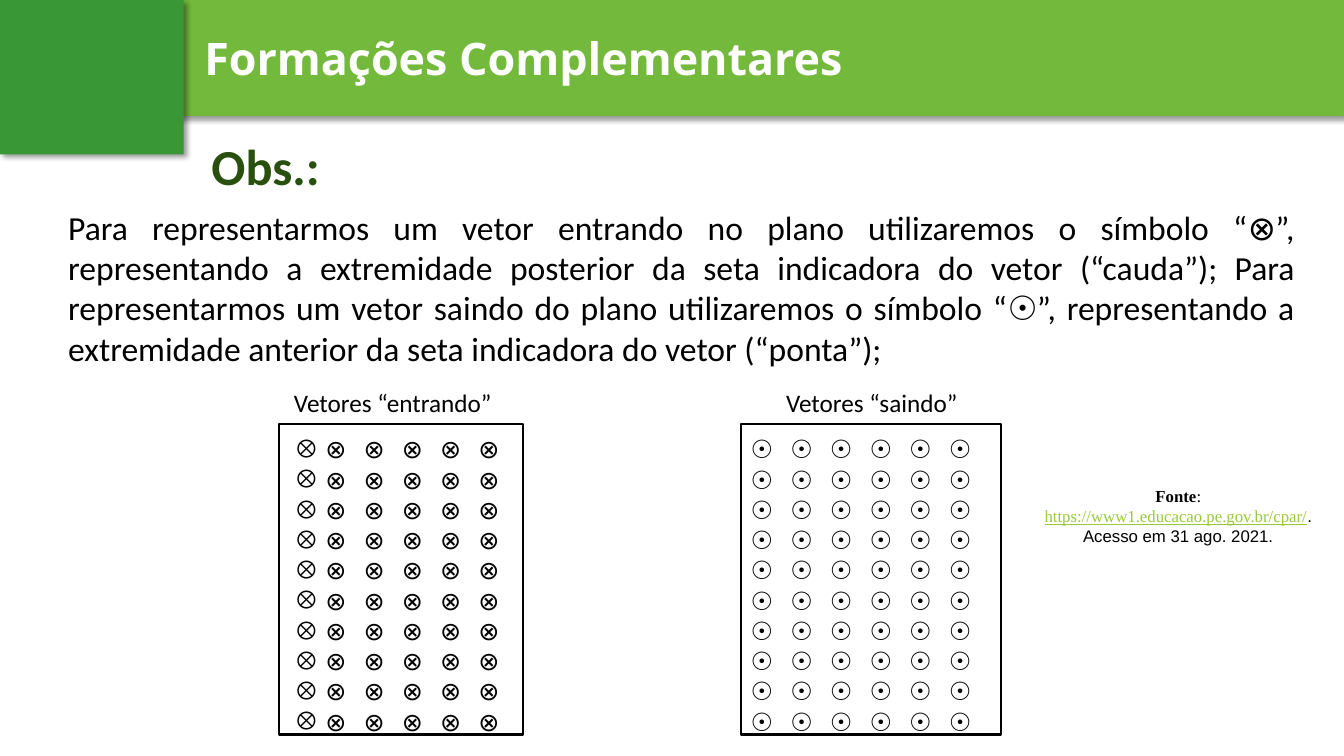
from dataclasses import dataclass

from lxml import etree
from pptx import Presentation
from pptx.dml.color import RGBColor
from pptx.enum.shapes import MSO_SHAPE
from pptx.enum.text import PP_ALIGN
from pptx.oxml import parse_xml
from pptx.oxml.ns import nsdecls, qn
from pptx.util import Cm, Pt

RECTANGLE = MSO_SHAPE.RECTANGLE
LEFT, CENTER, JUSTIFY = PP_ALIGN.LEFT, PP_ALIGN.CENTER, PP_ALIGN.JUSTIFY


@dataclass(frozen=True)
class Theme:
    bar: str = "72B93C"
    square: str = "399736"
    heading: str = "2A5010"
    link: str = "99CA3C"
    black: str = "000000"
    white: str = "FFFFFF"
    body_font: str = "Calibri"
    header_font: str = "Open Sans"
    source_font: str = "Times New Roman"
    plain_font: str = "Arial"
    header_size: int = 32
    heading_size: int = 36
    body_size: int = 24
    label_size: int = 18
    source_size: int = 12
    symbol_spacing: float = 4.07


THEME = Theme()
GRID_ROWS = 10


def format_run(run, size, color=THEME.black, font=THEME.body_font, bold=False, underline=False):
    run.font.size = Pt(size)
    run.font.name = font
    run.font.bold = bold
    run.font.underline = underline
    run.font.color.rgb = RGBColor.from_string(color)


def shadow_effect():
    return parse_xml(
        f'<a:effectLst {nsdecls("a")}><a:outerShdw blurRad="50800" dist="38100" '
        f'dir="2700000" algn="tl" rotWithShape="0"><a:srgbClr val="{THEME.black}">'
        '<a:alpha val="40000"/></a:srgbClr></a:outerShdw></a:effectLst>')


def add_text(slide, box, text, size, align=LEFT, inset=0.13, **style):
    """Place text in a box given as left, top, width, height in cm."""
    shape = slide.shapes.add_textbox(*map(Cm, box))
    frame = shape.text_frame
    frame.word_wrap = True
    frame.margin_top = frame.margin_bottom = Cm(inset)
    frame.text = text
    for paragraph in frame.paragraphs:
        paragraph.alignment = align
        for run in paragraph.runs:
            format_run(run, size, **style)
    return frame


def add_block(slide, box, color):
    shape = slide.shapes.add_shape(RECTANGLE, *map(Cm, box))
    shape.fill.solid()
    shape.fill.fore_color.rgb = RGBColor.from_string(color)
    shape.line.fill.background()
    shape._element.spPr.append(shadow_effect())


def add_bullet(paragraph, symbol):
    properties = paragraph._p.get_or_add_pPr()
    indent = Cm(0.79)
    properties.set("marL", str(indent))
    properties.set("indent", str(-indent))
    color = etree.SubElement(properties, qn("a:buClr"))
    etree.SubElement(color, qn("a:srgbClr"), val=THEME.black)
    etree.SubElement(properties, qn("a:buFont"), typeface=THEME.plain_font)
    etree.SubElement(properties, qn("a:buChar"), char=symbol)


def add_header(slide, box, title):
    left, top, width, height = box
    add_block(slide, (left + 3.58, top, width - 3.58, height), THEME.bar)
    frame = add_text(slide, (left + 4.9, top + 0.64, 27.48, 1.63), title, THEME.header_size,
                     color=THEME.white, font=THEME.header_font, bold=True)
    properties = frame.paragraphs[0].runs[0].font._element
    properties.find(qn("a:solidFill")).addnext(shadow_effect())
    add_block(slide, (left, top, 4.63, 3.89), THEME.square)


def add_explanation(slide, box):
    left, top, width, height = box
    add_text(slide, (left + 3.61, top, 27, 1.8), "Obs.:", THEME.heading_size,
             color=THEME.heading, bold=True)
    add_text(
        slide, (left, top + 1.8, width, height - 1.8),
        "Para representarmos um vetor entrando no plano utilizaremos o símbolo “⊗”, "
        "representando a extremidade posterior da seta indicadora do vetor (“cauda”); "
        "Para representarmos um vetor saindo do plano utilizaremos o símbolo “☉”, "
        "representando a extremidade anterior da seta indicadora do vetor (“ponta”);",
        THEME.body_size, align=JUSTIFY)


def add_vector_panel(slide, box, caption, symbol, columns, text_offset, caption_offset,
                     align=LEFT, bulleted=False):
    left, top, width, height = box
    # Symbol grid, one paragraph per row
    row = " ".join([symbol] * columns)
    grid_box = (left + text_offset, top + 0.11, width - text_offset, height + 0.13)
    frame = add_text(slide, grid_box, "\n".join([row] * GRID_ROWS), THEME.label_size)
    for paragraph in frame.paragraphs:
        paragraph.runs[0].font._element.set("spc", str(round(THEME.symbol_spacing * 100)))
        if bulleted:
            add_bullet(paragraph, symbol)
    # Frame
    border = slide.shapes.add_shape(RECTANGLE, *map(Cm, box))
    border.shadow.inherit = False
    border.fill.background()
    border.line.color.rgb = RGBColor.from_string(THEME.black)
    border.line.width = Pt(1.5)
    # Caption
    add_text(slide, (left + caption_offset, top - 1.06, 6.1, 1.02), caption,
             THEME.label_size, align=align)


def add_source(slide, box):
    frame = add_text(slide, box, "Fonte", THEME.source_size, align=CENTER, inset=0.25,
                     font=THEME.source_font, bold=True)
    parts = (
        (":", {"font": THEME.source_font}),
        (" https://www1.educacao.pe.gov.br/cpar/",
         {"font": THEME.source_font, "color": THEME.link, "underline": True}),
        (". Acesso em 31 ago. 2021.", {"font": THEME.plain_font}),
    )
    for text, style in parts:
        run = frame.paragraphs[0].add_run()
        run.text = text
        format_run(run, THEME.source_size, **style)


def main():
    presentation = Presentation()
    presentation.slide_width, presentation.slide_height = Cm(33.87), Cm(19.05)
    slide = presentation.slides.add_slide(presentation.slide_layouts[6])

    add_header(slide, (0, 0, 33.87, 2.92), "Formações Complementares")
    add_explanation(slide, (1.47, 3.28, 31.42, 7.18))
    add_vector_panel(slide, (7.04, 10.69, 6.15, 7.82), "Vetores “entrando”", "⊗", 5,
                     text_offset=0.12, caption_offset=0.12, bulleted=True)
    add_vector_panel(slide, (18.67, 10.69, 6.55, 7.82), "Vetores “saindo”", "☉", 6,
                     text_offset=0, caption_offset=0.25, align=CENTER)
    add_source(slide, (25.53, 11.99, 8.33, 2.06))

    presentation.save("out.pptx")


if __name__ == "__main__":
    main()
